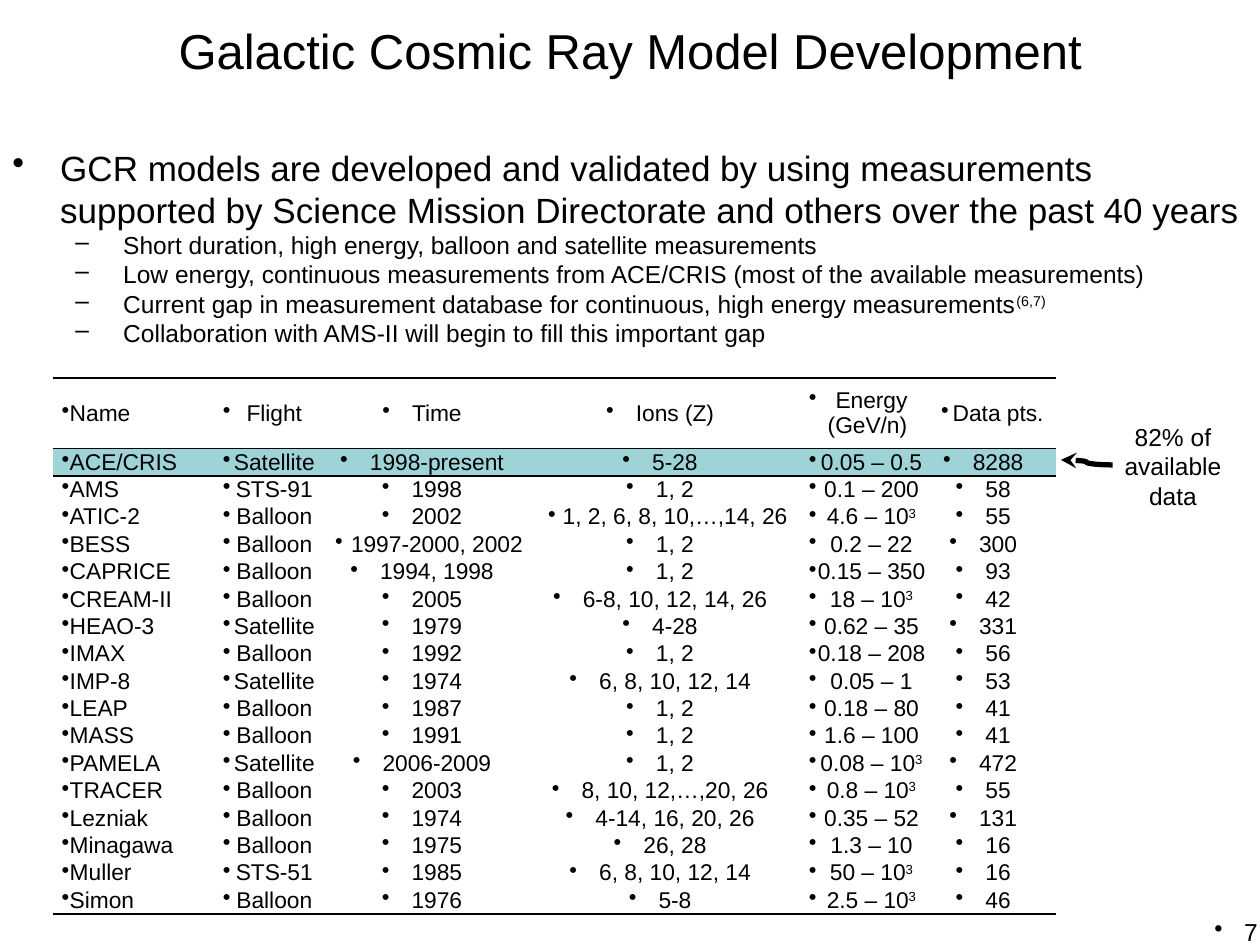
from dataclasses import dataclass

from lxml import etree
from pptx import Presentation
from pptx.dml.color import RGBColor
from pptx.enum import shapes, text
from pptx.oxml import ns
from pptx.util import Inches, Pt


@dataclass(frozen=True)
class Theme:
    font: str = "Arial"
    ink: RGBColor = RGBColor(0, 0, 0)
    highlight: RGBColor = RGBColor(0x9E, 0xD3, 0xD7)
    title: int = 28
    lead: int = 20
    small: int = 14
    table: int = 13


THEME = Theme()
ALIGN = text.PP_ALIGN
NO_GRID_STYLE = "{2D5ABB26-0587-4C30-8999-92F81FD0307C}"

LEAD = ("GCR models are developed and validated by using measurements "
        "supported by Science Mission Directorate and others over the past 40 years")
POINTS = [
    "Short duration, high energy, balloon and satellite measurements",
    "Low energy, continuous measurements from ACE/CRIS (most of the available measurements)",
    "Current gap in measurement database for continuous, high energy measurements^(6,7)",
    "Collaboration with AMS-II will begin to fill this important gap",
]

# A caret starts a superscript.
HEADER = ("Name", "Flight", "Time", "Ions (Z)", "Energy (GeV/n)", "Data pts.")
MISSIONS = [
    ("ACE/CRIS", "Satellite", "1998-present", "5-28", "0.05 – 0.5", "8288"),
    ("AMS", "STS-91", "1998", "1, 2", "0.1 – 200", "58"),
    ("ATIC-2", "Balloon", "2002", "1, 2, 6, 8, 10,…,14, 26", "4.6 – 10^3", "55"),
    ("BESS", "Balloon", "1997-2000, 2002", "1, 2", "0.2 – 22", "300"),
    ("CAPRICE", "Balloon", "1994, 1998", "1, 2", "0.15 – 350", "93"),
    ("CREAM-II", "Balloon", "2005", "6-8, 10, 12, 14, 26", "18 – 10^3", "42"),
    ("HEAO-3", "Satellite", "1979", "4-28", "0.62 – 35", "331"),
    ("IMAX", "Balloon", "1992", "1, 2", "0.18 – 208", "56"),
    ("IMP-8", "Satellite", "1974", "6, 8, 10, 12, 14", "0.05 – 1", "53"),
    ("LEAP", "Balloon", "1987", "1, 2", "0.18 – 80", "41"),
    ("MASS", "Balloon", "1991", "1, 2", "1.6 – 100", "41"),
    ("PAMELA", "Satellite", "2006-2009", "1, 2", "0.08 – 10^3", "472"),
    ("TRACER", "Balloon", "2003", "8, 10, 12,…,20, 26", "0.8 – 10^3", "55"),
    ("Lezniak", "Balloon", "1974", "4-14, 16, 20, 26", "0.35 – 52", "131"),
    ("Minagawa", "Balloon", "1975", "26, 28", "1.3 – 10", "16"),
    ("Muller", "STS-51", "1985", "6, 8, 10, 12, 14", "50 – 10^3", "16"),
    ("Simon", "Balloon", "1976", "5-8", "2.5 – 10^3", "46"),
]
COLUMN_WIDTHS = (1.28, 0.89, 1.69, 2.09, 1.03, 0.98)
ENERGY_COLUMN = HEADER.index("Energy (GeV/n)")
TABLE_HEIGHT, HEADER_HEIGHT = 4.25, 0.56


def write(paragraph, content, size, align=None, bullet=None, level=0, margin=None, hanging=0):
    """Fill a paragraph; the part of content after a caret is superscript."""
    paragraph.alignment = align
    paragraph.level = level
    properties = paragraph._p.get_or_add_pPr()
    if margin is not None:
        properties.set("marL", str(Inches(margin)))
        properties.set("indent", str(Inches(-hanging)))
    if bullet:
        etree.SubElement(properties, ns.qn("a:buChar")).set("char", bullet)
    for index, part in enumerate(content.split("^")):
        run = paragraph.add_run()
        run.text = part
        run.font.name = THEME.font
        run.font.size = Pt(size)
        run.font.color.rgb = THEME.ink
        if index:
            run._r.get_or_add_rPr().set("baseline", "30000")


def place(shape, left, top, width, height):
    shape.left, shape.top = Inches(left), Inches(top)
    shape.width, shape.height = Inches(width), Inches(height)


def add_title(slide, content):
    title = slide.shapes.title
    place(title, 0, 0.11, 10, 0.57)
    title.text_frame.auto_size = text.MSO_AUTO_SIZE.SHAPE_TO_FIT_TEXT
    write(title.text_frame.paragraphs[0], content, THEME.title, ALIGN.CENTER)


def add_text_frame(slide, left, top, width, height):
    box = slide.shapes.add_textbox(Inches(left), Inches(top), Inches(width), Inches(height))
    box.text_frame.word_wrap = True
    return box.text_frame


def add_outline(slide):
    frame = add_text_frame(slide, 0, 1.11, 10, 2.15)
    write(frame.paragraphs[0], LEAD, THEME.lead, bullet="•", margin=0.38, hanging=0.38)
    for point in POINTS:
        write(frame.add_paragraph(), point, THEME.small, bullet="–",
              level=1, margin=0.88, hanging=0.38)


def add_border(cell, side):
    line = etree.SubElement(cell._tc.get_or_add_tcPr(), ns.qn(f"a:ln{side}"), w=str(Pt(1)))
    fill = etree.SubElement(line, ns.qn("a:solidFill"))
    etree.SubElement(fill, ns.qn("a:srgbClr"), val=str(THEME.ink))


def format_cell(cell, row, column):
    cell.vertical_anchor = text.MSO_ANCHOR.MIDDLE
    cell.margin_left = cell.margin_right = Inches(0.05 if column == ENERGY_COLUMN else 0.07)
    cell.margin_top = cell.margin_bottom = 0
    if row in (0, 1):
        add_border(cell, "T")
    if row in (0, len(MISSIONS)):
        add_border(cell, "B")
    if row == 1:
        cell.fill.solid()
        cell.fill.fore_color.rgb = THEME.highlight
    else:
        cell.fill.background()


def add_mission_table(slide):
    rows = [HEADER, *MISSIONS]
    frame = slide.shapes.add_table(len(rows), len(HEADER), Inches(0.42), Inches(3),
                                   Inches(sum(COLUMN_WIDTHS)), Inches(TABLE_HEIGHT))
    table = frame.table
    table.first_row = table.horz_banding = False
    table._tbl.tblPr.find(ns.qn("a:tableStyleId")).text = NO_GRID_STYLE
    for column, width in zip(table.columns, COLUMN_WIDTHS):
        column.width = Inches(width)
    row_height = Inches((TABLE_HEIGHT - HEADER_HEIGHT) / len(MISSIONS))
    for row_index, values in enumerate(rows):
        table.rows[row_index].height = row_height if row_index else Inches(HEADER_HEIGHT)
        for column_index, value in enumerate(values):
            cell = table.cell(row_index, column_index)
            format_cell(cell, row_index, column_index)
            name_align = ALIGN.JUSTIFY if row_index else None
            write(cell.text_frame.paragraphs[0], value, THEME.table,
                  ALIGN.CENTER if column_index else name_align, bullet="•")


def add_callout(slide):
    frame = add_text_frame(slide, 8.63, 3.3, 1.36, 0.81)
    write(frame.paragraphs[0], "82% of available data", THEME.small, ALIGN.CENTER,
          level=1, margin=0)
    arrow = slide.shapes.add_connector(shapes.MSO_CONNECTOR.CURVE, Inches(8.42), Inches(3.65),
                                       Inches(8.83), Inches(3.69))
    arrow.line.color.rgb = THEME.ink
    arrow.line.width = Pt(3)
    etree.SubElement(arrow.line._get_or_add_ln(), ns.qn("a:headEnd"), type="stealth")
    etree.SubElement(arrow._element.spPr, ns.qn("a:effectLst"))


def add_page_number(slide, number):
    frame = add_text_frame(slide, 7.75, 7.23, 2.33, 0.52)
    write(frame.paragraphs[0], number, THEME.small, ALIGN.RIGHT, bullet="•")


def main():
    presentation = Presentation()
    presentation.slide_width, presentation.slide_height = Inches(10), Inches(7.5)
    slide = presentation.slides.add_slide(presentation.slide_layouts[5])
    add_page_number(slide, "7")
    add_title(slide, "Galactic Cosmic Ray Model Development")
    add_outline(slide)
    add_mission_table(slide)
    add_callout(slide)
    presentation.save("out.pptx")


if __name__ == "__main__":
    main()
